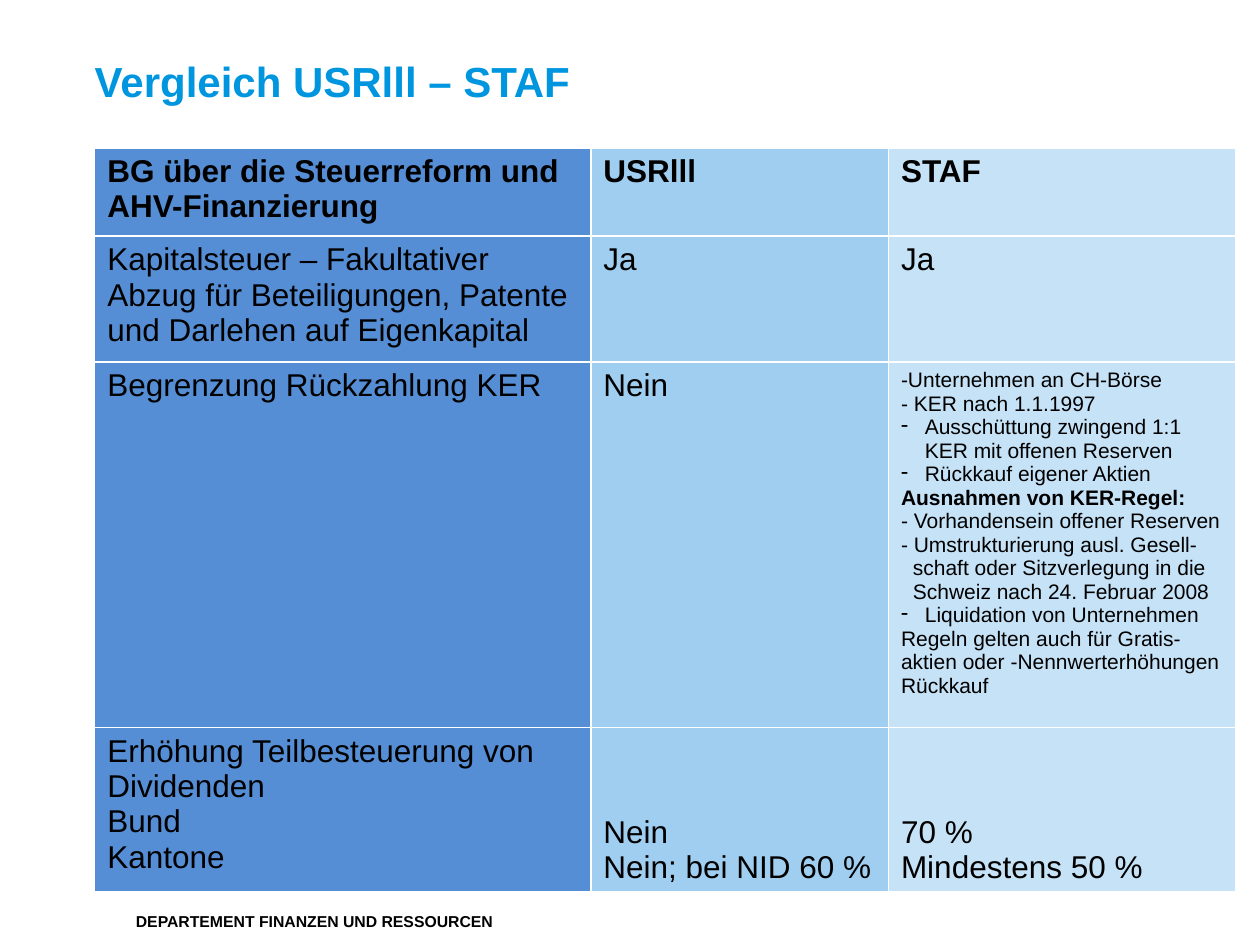
"""Build a slide with a table that compares USRlll and STAF."""
import pptx
import pptx.util
import pptx.dml.color
import pptx.enum.text
import pptx.oxml.ns
import lxml.etree

Cm = pptx.util.Cm
RGBColor = pptx.dml.color.RGBColor
Anchor = pptx.enum.text.MSO_ANCHOR
BLACK = RGBColor(0x00, 0x00, 0x00)
BLUE = RGBColor(0x00, 0x96, 0xDF)
FILLS = [
    RGBColor(0x55, 0x8E, 0xD5),
    RGBColor(0xA0, 0xCE, 0xF0),
    RGBColor(0xC6, 0xE2, 0xF6),
]


def write(frame, text, first=False, size=18, bold=False, color=BLACK, left=0, hang=0, mark=None):
    par = frame.paragraphs[0] if first else frame.add_paragraph()
    par.text = text
    props = par._p.get_or_add_pPr()
    props.set("marL", str(Cm(left)))
    props.set("indent", str(-Cm(hang)))
    if mark:
        bullet = lxml.etree.SubElement(props, pptx.oxml.ns.qn("a:buChar"))
        bullet.set("char", mark)
    else:
        lxml.etree.SubElement(props, pptx.oxml.ns.qn("a:buNone"))
    par.alignment = pptx.enum.text.PP_ALIGN.LEFT
    par.space_before = pptx.util.Pt(0)
    font = par.runs[0].font
    font.name = "Arial"
    font.size = pptx.util.Pt(size)
    font.bold = bold
    font.color.rgb = color


deck = pptx.Presentation()
deck.slide_width = Cm(25.4)
deck.slide_height = Cm(19.05)
slide = deck.slides.add_slide(deck.slide_layouts[5])

title = slide.shapes.title
title.left, title.top, title.width, title.height = Cm(1.91), Cm(1.12), Cm(23.19), Cm(1.7)
frame = title.text_frame
frame.margin_left = frame.margin_top = frame.margin_right = frame.margin_bottom = 0
frame.vertical_anchor = Anchor.TOP
frame.auto_size = pptx.enum.text.MSO_AUTO_SIZE.NONE
write(frame, "Vergleich USRlll – STAF", first=True, size=24, bold=True, color=BLUE, left=1, hang=1)

foot = slide.shapes.add_textbox(Cm(2.49), Cm(18.26), Cm(16.2), Cm(0.64)).text_frame
foot.word_wrap = True
write(foot, "DEPARTEMENT FINANZEN UND RESSOURCEN", first=True, size=9, bold=True)

small = {"size": 12}
strong = {"size": 12, "bold": True}
dash = {"size": 12, "left": 0.48, "hang": 0.48, "mark": "-"}
inset = {"size": 12, "left": 0.24}
rules = [
    ("-Unternehmen an CH-Börse", small),
    ("- KER nach 1.1.1997", small),
    ("Ausschüttung zwingend 1:1 KER mit offenen Reserven", dash),
    ("Rückkauf eigener Aktien", dash),
    ("Ausnahmen von KER-Regel:", strong),
    ("- Vorhandensein offener Reserven", small),
    ("- Umstrukturierung ausl. Gesell-", small),
    ("schaft oder Sitzverlegung in die", inset),
    ("Schweiz nach 24. Februar 2008", inset),
    ("Liquidation von Unternehmen", dash),
    ("Regeln gelten auch für Gratis-aktien oder -Nennwerterhöhungen", small),
    ("Rückkauf", small),
]
head = {"bold": True}
rows = [
    [
        [("BG über die Steuerreform und AHV-Finanzierung", head)],
        [("USRlll", head)],
        [("STAF", head)],
    ],
    [
        [("Kapitalsteuer – Fakultativer Abzug für Beteiligungen, Patente "
          "und Darlehen auf Eigenkapital", {})],
        [("Ja", {})],
        [("Ja", {})],
    ],
    [[("Begrenzung Rückzahlung KER", {})], [("Nein", {})], rules],
    [
        [("Erhöhung Teilbesteuerung von Dividenden", {}), ("Bund", {}), ("Kantone", {})],
        [("Nein", {}), ("Nein; bei NID 60 %", {})],
        [("70 %", {}), ("Mindestens 50 %", {})],
    ],
]
widths = [10, 6, 7.01]
heights = [1.7, 2.38, 6.88, 3.07]

table = slide.shapes.add_table(
    len(rows), len(widths), Cm(1.91), Cm(2.98), Cm(sum(widths)), Cm(sum(heights))
).table
table.horz_banding = False
for col, width in zip(table.columns, widths):
    col.width = Cm(width)
for row, height, cells in zip(table.rows, heights, rows):
    row.height = Cm(height)
    for cell, fill, lines in zip(row.cells, FILLS, cells):
        cell.fill.solid()
        cell.fill.fore_color.rgb = fill
        for place, (text, style) in enumerate(lines):
            write(cell.text_frame, text, first=place == 0, **style)
for cell in list(table.rows[3].cells)[1:]:
    cell.vertical_anchor = Anchor.BOTTOM

deck.save("out.pptx")
